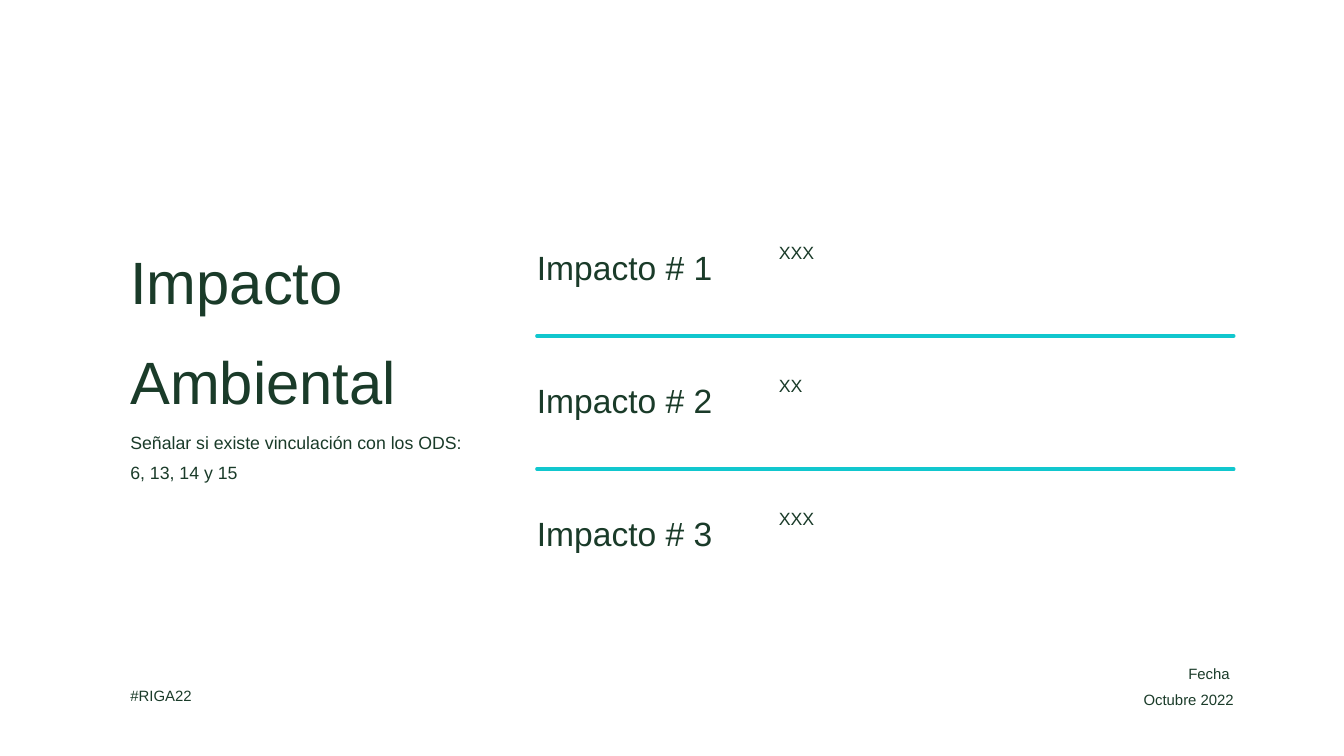
from dataclasses import dataclass

from lxml.etree import SubElement
from pptx import Presentation
from pptx.dml.color import RGBColor
from pptx.enum.shapes import MSO_CONNECTOR
from pptx.enum.text import MSO_ANCHOR, MSO_AUTO_SIZE, PP_ALIGN
from pptx.oxml.ns import qn
from pptx.shapes.shapetree import GroupShapes, SlideShapes
from pptx.util import Inches, Pt

GREEN = RGBColor(0x1A, 0x3B, 0x29)
TURQUOISE = RGBColor(0x11, 0xC7, 0xCE)
WHITE = RGBColor(0xFF, 0xFF, 0xFF)
FONT = "Arial"
LEFT_MARGIN = 1.94
RIGHT_MARGIN = 18.36
IMPACT_LEFT = 7.99
DETAIL_LEFT = 11.59
FIRST_IMPACT_TOP = 3.44
FIRST_DIVIDER_TOP = 5
ROW_PITCH = 1.98


@dataclass
class Impact:
    title: str
    detail: str


IMPACTS = [
    Impact("Impacto # 1", "XXX"),
    Impact("Impacto # 2", "XX"),
    Impact("Impacto # 3", "XXX"),
]


def add_text(
    shapes: SlideShapes | GroupShapes,
    text: str,
    *,
    left: float,
    top: float,
    width: float,
    height: float,
    size: float,
    align: PP_ALIGN = PP_ALIGN.LEFT,
) -> None:
    shape = shapes.add_textbox(Inches(left), Inches(top), Inches(width), Inches(height))
    frame = shape.text_frame
    frame.margin_left = frame.margin_top = frame.margin_right = frame.margin_bottom = 0
    frame.word_wrap = True
    frame.auto_size = MSO_AUTO_SIZE.SHAPE_TO_FIT_TEXT
    frame.vertical_anchor = MSO_ANCHOR.TOP
    frame.text = text
    for paragraph in frame.paragraphs:
        paragraph.alignment = align
        paragraph.line_spacing = 1.4
        paragraph.font.name = FONT
        paragraph.font.size = Pt(size)
        paragraph.font.color.rgb = GREEN


def add_divider(shapes: SlideShapes, top: float) -> None:
    connector = shapes.add_connector(
        MSO_CONNECTOR.STRAIGHT,
        Inches(IMPACT_LEFT), Inches(top), Inches(RIGHT_MARGIN), Inches(top),
    )
    connector.line.color.rgb = TURQUOISE
    connector.line.width = Pt(3.75)
    properties = connector.element.spPr
    properties.find(qn("a:ln")).set("cap", "rnd")
    SubElement(properties, qn("a:effectLst"))


def add_impact(shapes: SlideShapes, impact: Impact, top: float) -> None:
    group = shapes.add_group_shape()
    add_text(group.shapes, impact.title, left=IMPACT_LEFT, top=top,
             width=3.15, height=0.65, size=36)
    add_text(group.shapes, impact.detail, left=DETAIL_LEFT, top=top + 0.03,
             width=RIGHT_MARGIN - DETAIL_LEFT, height=0.34, size=19)


def main() -> None:
    presentation = Presentation()
    presentation.slide_width = Inches(20)
    presentation.slide_height = Inches(11.25)
    slide = presentation.slides.add_slide(presentation.slide_layouts[6])
    slide.background.fill.solid()
    slide.background.fill.fore_color.rgb = WHITE
    shapes = slide.shapes

    for index in range(len(IMPACTS) - 1):
        add_divider(shapes, FIRST_DIVIDER_TOP + index * ROW_PITCH)

    add_text(shapes, "Impacto\nAmbiental", left=LEFT_MARGIN, top=3.21,
             width=5.06, height=2.45, size=64)

    for index, impact in enumerate(IMPACTS):
        add_impact(shapes, impact, FIRST_IMPACT_TOP + index * ROW_PITCH)

    add_text(shapes, "#RIGA22", left=LEFT_MARGIN, top=10.11,
             width=2.39, height=0.27, size=16)
    add_text(shapes, "Fecha \nOctubre 2022", left=15.97, top=9.79,
             width=2.39, height=0.65, size=16, align=PP_ALIGN.RIGHT)
    add_text(shapes, "Señalar si existe vinculación con los ODS: 6, 13, 14 y 15",
             left=LEFT_MARGIN, top=6.3, width=5.06, height=0.72, size=19)

    presentation.save("out.pptx")


if __name__ == "__main__":
    main()
